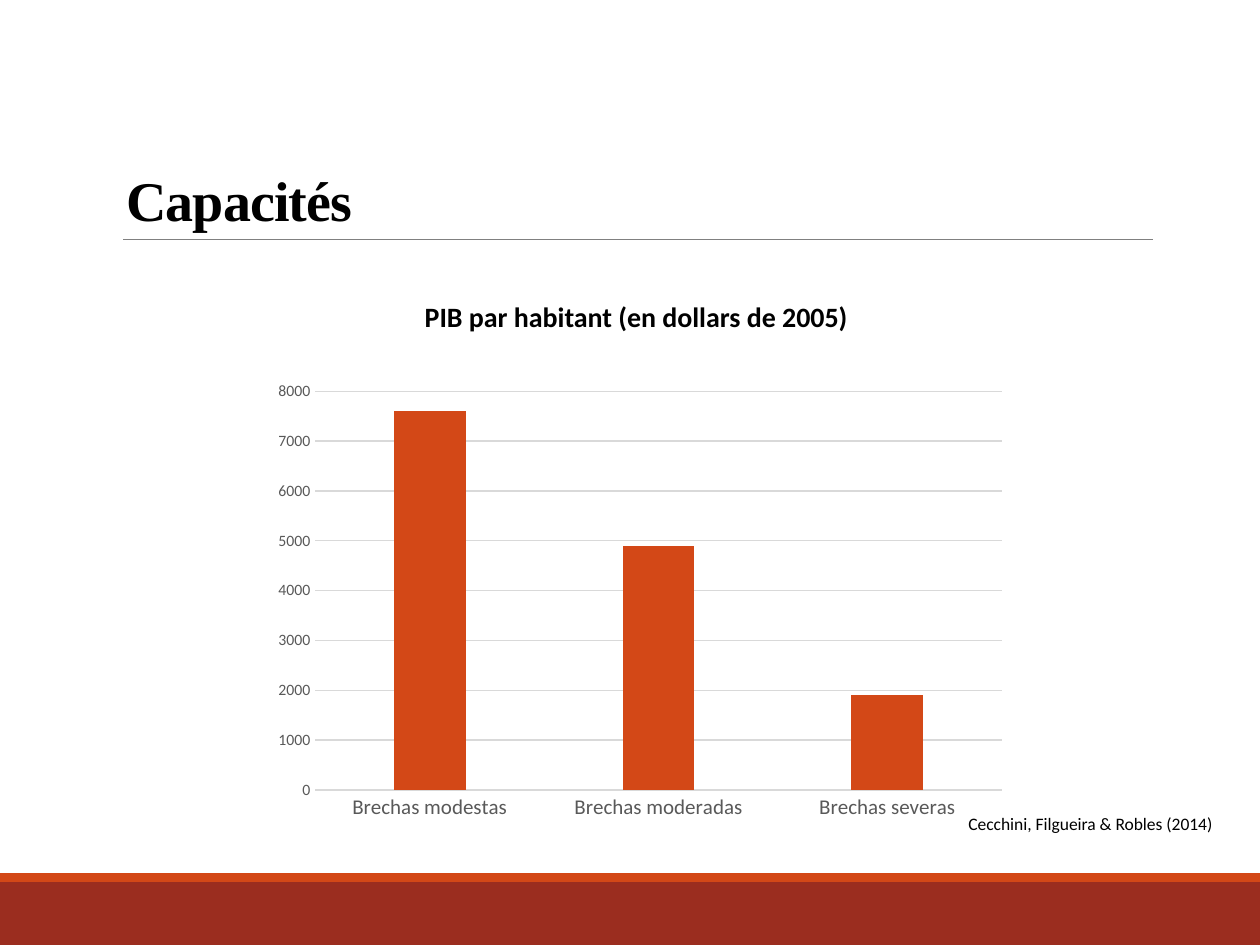
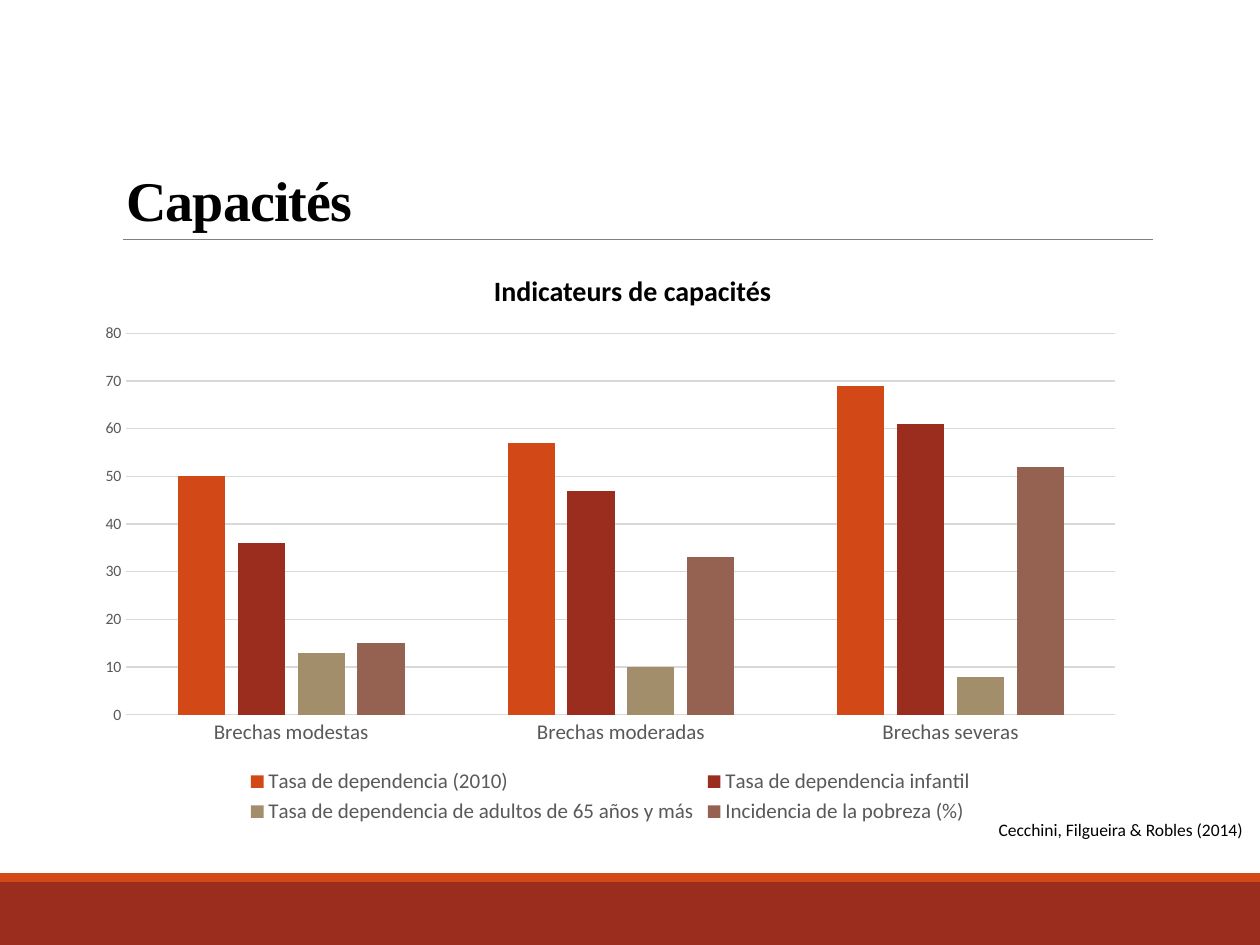
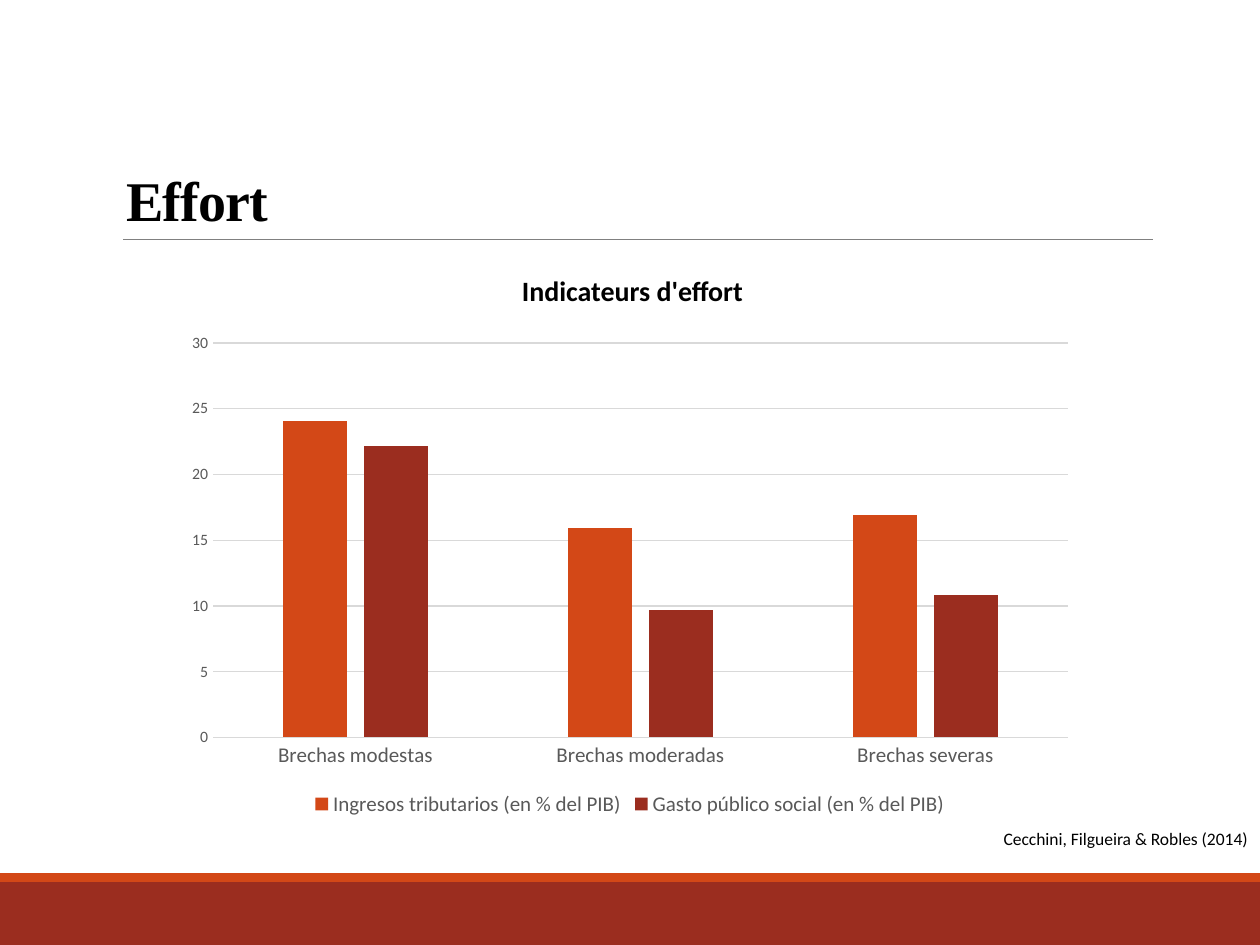
from lxml import etree
from pptx import Presentation
from pptx.chart.data import CategoryChartData
from pptx.dml.color import RGBColor
from pptx.enum.chart import XL_CHART_TYPE, XL_LEGEND_POSITION, XL_TICK_MARK
from pptx.enum.shapes import MSO_CONNECTOR, MSO_SHAPE
from pptx.enum.text import MSO_ANCHOR, MSO_AUTO_SIZE, PP_ALIGN
from pptx.oxml.ns import qn
from pptx.util import Inches, Pt

COLUMN = XL_CHART_TYPE.COLUMN_CLUSTERED
BOTTOM = XL_LEGEND_POSITION.BOTTOM
NO_TICK = XL_TICK_MARK.NONE
STRAIGHT = MSO_CONNECTOR.STRAIGHT
RECT = MSO_SHAPE.RECTANGLE
LOW = MSO_ANCHOR.BOTTOM
NO_FIT = MSO_AUTO_SIZE.NONE
LEFT, CENTER, RIGHT = PP_ALIGN.LEFT, PP_ALIGN.CENTER, PP_ALIGN.RIGHT

COLS, ROWS = 100, 75
WIDE, HIGH = Inches(10), Inches(7.5)
BLACK, TEXT, GRID, RULE = "000000", "595959", "D9D9D9", "808080"
ORANGE, BRICK = "D34817", "9B2D1F"
TONES = [ORANGE, BRICK, "A28E6A", "956251"]
SANS, SERIF = "Calibri", "Times New Roman"

HEAD = (9, 3.1, 82.5, 15.9)
FOOT = (0, 69.3, COLS, 5.7)
NAME_SIZE = (59.8, 3.7)
CITE_SIZE = (23.6, 2.7)
CITE = "Cecchini, Filgueira & Robles (2014)"
GROUPS = ["Brechas modestas", "Brechas moderadas", "Brechas severas"]

PAGES = [
    {
        "title": "Capacités",
        "name": "PIB par habitant (en dollars de 2005)",
        "name_at": (20.6, 23.3),
        "cite_at": (73.6, 64),
        "box": (20.9, 29.6, 59.8, 36.2),
        "scale": (8000, 1000),
        "series": {"Series 1": [7600, 4900, 1900]},
    },
    {
        "title": "Capacités",
        "name": "Indicateurs de capacités",
        "name_at": (20.3, 21.2),
        "cite_at": (76, 64.5),
        "box": (6.7, 24.9, 83.5, 40.9),
        "scale": (80, 10),
        "series": {
            "Tasa de dependencia (2010)": [50, 57, 69],
            "Tasa de dependencia infantil": [36, 47, 61],
            "Tasa de dependencia de adultos de 65 años y más": [13, 10, 8],
            "Incidencia de la pobreza (%)": [15, 33, 52],
        },
    },
    {
        "title": "Effort",
        "name": "Indicateurs d'effort",
        "name_at": (20.3, 21.2),
        "cite_at": (76.4, 65.2),
        "box": (13.8, 25.7, 72.4, 39.5),
        "scale": (30, 5),
        "series": {
            "Ingresos tributarios (en % del PIB)": [24.1, 15.9, 16.9],
            "Gasto público social (en % del PIB)": [22.2, 9.7, 10.8],
        },
    },
]


def tint(code):
    """Turn a hex string into a colour."""
    return RGBColor.from_string(code)


def place(box):
    """Turn columns and rows into slide lengths."""
    x, y, w, h = box
    return (round(x * WIDE / COLS), round(y * HIGH / ROWS),
            round(w * WIDE / COLS), round(h * HIGH / ROWS))


def style(font, size, code, face=SANS, bold=False):
    """Set the look of a font."""
    font.size, font.name, font.bold = Pt(size), face, bold
    font.color.rgb = tint(code)


def stroke(line, code, width):
    """Set the colour and width of a line."""
    line.color.rgb = tint(code)
    line.width = Pt(width)


def bar(slide, box, code):
    """Add a plain filled bar."""
    shape = slide.shapes.add_shape(RECT, *place(box))
    shape.shadow.inherit = False
    shape.fill.solid()
    shape.fill.fore_color.rgb = tint(code)
    shape.line.fill.background()


def footer(slide, box):
    """Add the two bands at the foot of the slide."""
    x, y, w, h = box
    thin = 0.7
    bar(slide, (x, y + thin, w, h - thin), BRICK)
    bar(slide, (x, y, w, thin), ORANGE)


def header(slide, box, text):
    """Fill the title and draw the rule under it."""
    x, y, w, h = place(box)
    title = slide.shapes.title
    title.left, title.top, title.width, title.height = x, y, w, h
    frame = title.text_frame
    frame.auto_size, frame.vertical_anchor = NO_FIT, LOW
    para = frame.paragraphs[0]
    para.alignment, para.line_spacing = LEFT, 0.85
    run = para.add_run()
    run.text = text
    style(run.font, 32, BLACK, SERIF, True)
    run.font._element.set("spc", "-50")
    rule = slide.shapes.add_connector(
        STRAIGHT, x + Inches(0.08), y + h, x + w, y + h)
    stroke(rule.line, RULE, 0.5)
    etree.SubElement(rule._element.spPr, qn("a:effectLst"))


def label(slide, box, text, size, align, bold=False):
    """Add one line of text."""
    frame = slide.shapes.add_textbox(*place(box)).text_frame
    frame.word_wrap = True
    para = frame.paragraphs[0]
    para.alignment = align
    run = para.add_run()
    run.text = text
    style(run.font, size, BLACK, bold=bold)


def plot(slide, box, series, scale):
    """Add a column chart, with a legend for several series."""
    data = CategoryChartData()
    data.categories = GROUPS
    for name, values in series.items():
        data.add_series(name, values)
    chart = slide.shapes.add_chart(COLUMN, *place(box), data).chart
    style(chart.font, 10, BLACK)
    chart.has_title = False
    chart.has_legend = len(series) > 1
    if chart.has_legend:
        chart.legend.position = BOTTOM
        chart.legend.include_in_layout = False
        style(chart.legend.font, 12, TEXT)
    bars = chart.plots[0]
    bars.gap_width, bars.overlap = 219, -27
    bars.vary_by_categories = False
    for item, code in zip(bars.series, TONES):
        item.format.fill.solid()
        item.format.fill.fore_color.rgb = tint(code)
    base, side = chart.category_axis, chart.value_axis
    for axis, size in ((base, 12), (side, 9)):
        axis.major_tick_mark = axis.minor_tick_mark = NO_TICK
        style(axis.tick_labels.font, size, TEXT)
    stroke(base.format.line, GRID, 0.75)
    side.format.line.fill.background()
    stroke(side.major_gridlines.format.line, GRID, 0.75)
    side.minimum_scale = 0
    side.maximum_scale, side.major_unit = scale


def page(deck, part):
    """Build one chart slide."""
    slide = deck.slides.add_slide(deck.slide_layouts[5])
    footer(slide, FOOT)
    header(slide, HEAD, part["title"])
    plot(slide, part["box"], part["series"], part["scale"])
    label(slide, part["name_at"] + NAME_SIZE, part["name"], 16, CENTER, True)
    label(slide, part["cite_at"] + CITE_SIZE, CITE, 10, RIGHT)


def main():
    """Build and save the deck."""
    deck = Presentation()
    deck.slide_width, deck.slide_height = WIDE, HIGH
    for part in PAGES:
        page(deck, part)
    deck.save("out.pptx")


if __name__ == "__main__":
    main()
